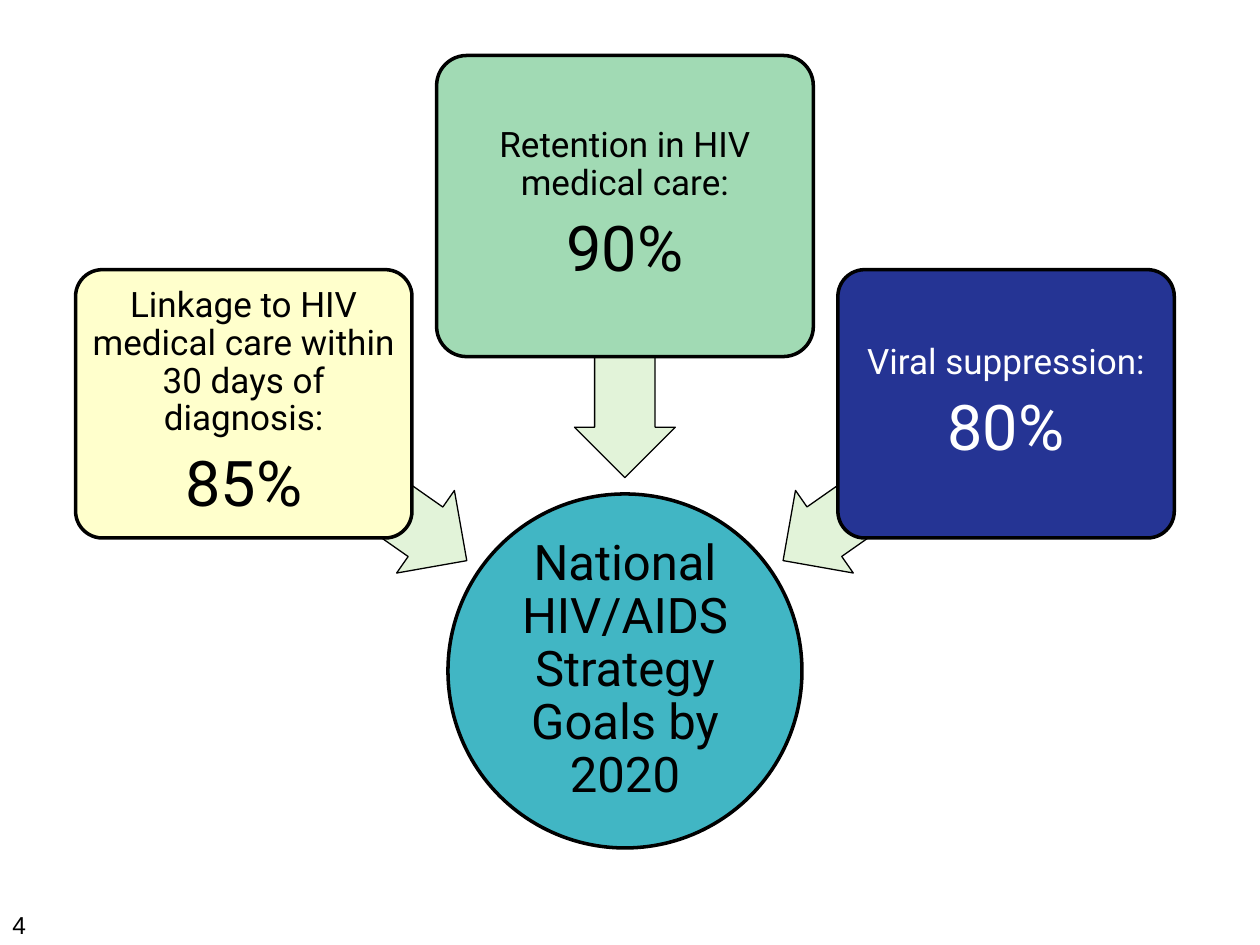
from dataclasses import dataclass

from lxml import etree
from pptx import Presentation
from pptx.dml.color import RGBColor
from pptx.enum.shapes import MSO_SHAPE
from pptx.enum.text import MSO_ANCHOR, PP_ALIGN
from pptx.oxml.ns import qn
from pptx.shapes.autoshape import Shape
from pptx.slide import Slide
from pptx.util import Inches, Pt

ROUNDED = MSO_SHAPE.ROUNDED_RECTANGLE
OVAL = MSO_SHAPE.OVAL
ARROW = MSO_SHAPE.LEFT_ARROW
MIDDLE = MSO_ANCHOR.MIDDLE
CENTER = PP_ALIGN.CENTER

SLIDE_WIDTH, SLIDE_HEIGHT = Inches(10), Inches(7.5)
COLUMNS, ROWS = 100, 75
COLUMN, ROW = SLIDE_WIDTH / COLUMNS, SLIDE_HEIGHT / ROWS
AXIS = 49.6
SIDE_OFFSET = 30.25
ARROW_OFFSET = 21.4

COLORS = {
    "black": "000000",
    "white": "FFFFFF",
    "hub": "41B6C4",
    "arrow": "C7E9B4",
    "linkage": "FFFFCC",
    "retention": "A1DAB4",
    "suppression": "253494",
}


@dataclass(frozen=True)
class Area:
    center_column: float
    center_row: float
    columns: float
    rows: float


@dataclass(frozen=True)
class Goal:
    label: str
    target: str
    area: Area
    fill: str
    ink: str
    arrow_center: tuple[float, float]
    arrow_rotation: int


GOALS = [
    Goal("Linkage to HIV medical care within 30 days of diagnosis:", "85%",
         Area(AXIS - SIDE_OFFSET, 32.05, 26.7, 21.3), "linkage", "black",
         (AXIS - ARROW_OFFSET, 38.3), 215),
    Goal("Retention in HIV medical care:", "90%",
         Area(AXIS, 16.35, 29.9, 23.9), "retention", "black",
         (AXIS, 27.1), 270),
    Goal("Viral suppression:", "80%",
         Area(AXIS + SIDE_OFFSET, 32.05, 26.7, 21.3), "suppression", "white",
         (AXIS + ARROW_OFFSET, 38.3), 325),
]


def color(name: str) -> RGBColor:
    return RGBColor.from_string(COLORS[name])


def add_outlined(slide: Slide, kind: MSO_SHAPE, area: Area, fill: str,
                 line_width: float) -> Shape:
    shape = slide.shapes.add_shape(
        kind,
        round((area.center_column - area.columns / 2) * COLUMN),
        round((area.center_row - area.rows / 2) * ROW),
        round(area.columns * COLUMN),
        round(area.rows * ROW),
    )
    shape.shadow.inherit = False
    shape.fill.solid()
    shape.fill.fore_color.rgb = color(fill)
    shape.line.color.rgb = color("black")
    shape.line.width = Pt(line_width)
    return shape


def write_lines(shape: Shape, lines: list[tuple[str, int]], ink: str, inset: float) -> None:
    frame = shape.text_frame
    frame.word_wrap = True
    frame.vertical_anchor = MIDDLE
    frame.margin_left = frame.margin_right = Inches(inset)
    frame.margin_top = frame.margin_bottom = Inches(inset)
    frame.text = "\n".join(text for text, size in lines)
    for paragraph, (text, size) in zip(frame.paragraphs, lines):
        paragraph.alignment = CENTER
        paragraph.line_spacing = 0.9
        font = paragraph.runs[0].font
        font.name = "Roboto"
        font.size = Pt(size)
        font.color.rgb = color(ink)
    for paragraph in frame.paragraphs[:-1]:
        paragraph.space_after = Pt(8)


def add_arrow(slide: Slide, goal: Goal) -> None:
    arrow = add_outlined(slide, ARROW, Area(*goal.arrow_center, 21.6, 8), "arrow", 0.75)
    arrow.rotation = goal.arrow_rotation
    arrow.adjustments[0] = 0.6
    arrow.adjustments[1] = 0.5
    fill_color = arrow._element.spPr.find(qn("a:solidFill"))[0]
    etree.SubElement(fill_color, qn("a:alpha"), val="50000")


def add_goal(slide: Slide, goal: Goal) -> None:
    add_arrow(slide, goal)
    box = add_outlined(slide, ROUNDED, goal.area, goal.fill, 2)
    box.adjustments[0] = 0.1
    write_lines(box, [(goal.label, 20), (goal.target, 36)], goal.ink, 0.04)


def add_hub(slide: Slide) -> None:
    hub = add_outlined(slide, OVAL, Area(AXIS, 53.25, 28.1, 28.1), "hub", 2)
    write_lines(hub, [("National HIV/AIDS Strategy Goals by 2020", 28)], "black", 0.02)


def add_slide_number(slide: Slide) -> None:
    box = slide.shapes.add_textbox(0, round(71.7 * ROW), round(23.3 * COLUMN), round(2.5 * ROW))
    box.text_frame.word_wrap = True
    box.text_frame.text = "4"
    font = box.text_frame.paragraphs[0].runs[0].font
    font.name = "Arial"
    font.size = Pt(14)
    font.color.rgb = color("black")


def main() -> None:
    presentation = Presentation()
    presentation.slide_width = SLIDE_WIDTH
    presentation.slide_height = SLIDE_HEIGHT
    slide = presentation.slides.add_slide(presentation.slide_layouts[6])
    add_slide_number(slide)
    add_hub(slide)
    for goal in GOALS:
        add_goal(slide, goal)
    presentation.save("out.pptx")


if __name__ == "__main__":
    main()
